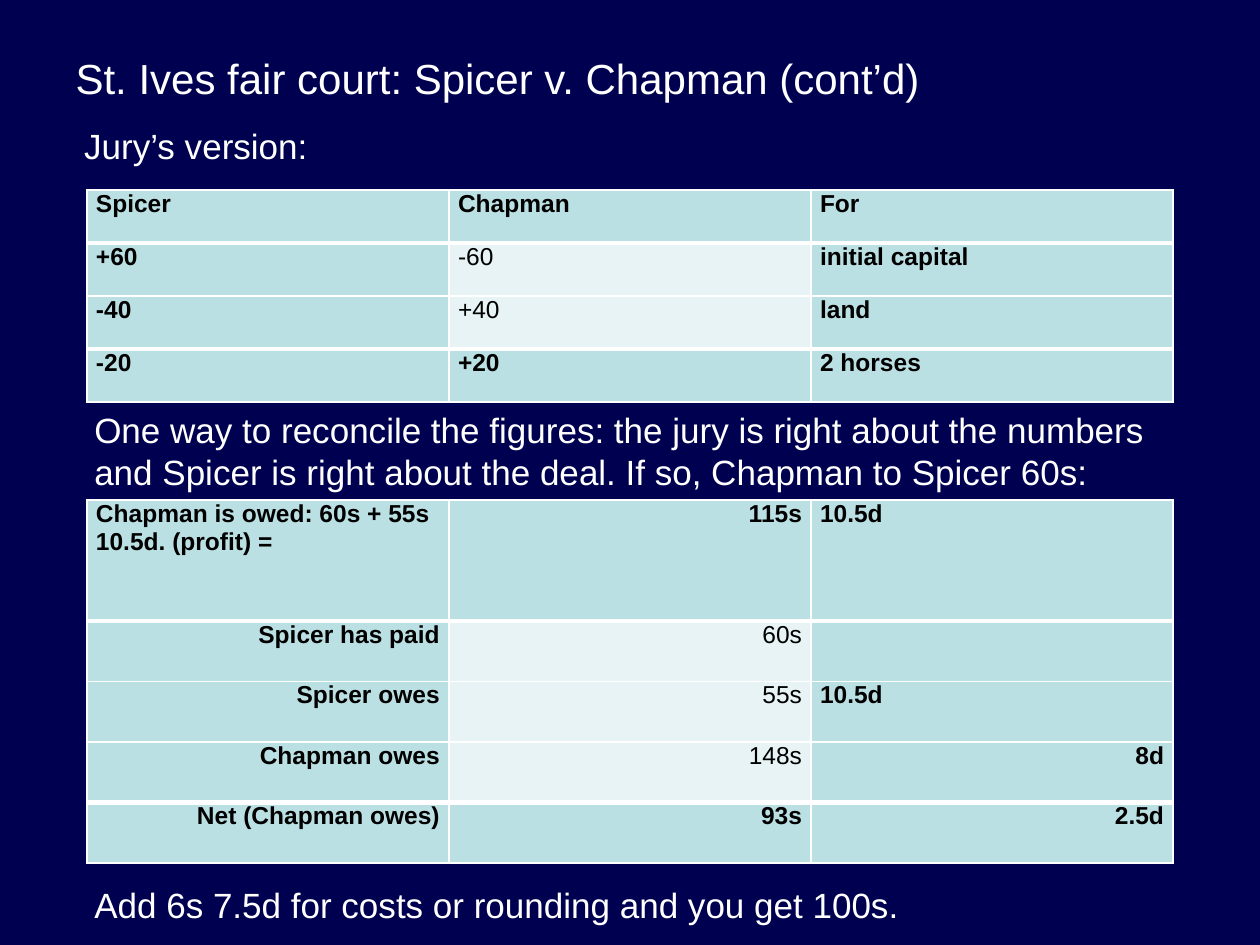
"""Build the Spicer v. Chapman slide with two account tables."""
from dataclasses import dataclass

import pptx
import pptx.dml.color
import pptx.enum.text
import pptx.oxml
import pptx.oxml.ns
import pptx.util

ALIGN = {"l": pptx.enum.text.PP_ALIGN.LEFT, "r": pptx.enum.text.PP_ALIGN.RIGHT}
ANCHOR = pptx.enum.text.MSO_ANCHOR
AUTO_SIZE = pptx.enum.text.MSO_AUTO_SIZE


@dataclass(frozen=True)
class Theme:
    """Colours, font and type sizes."""
    back: str = "000050"
    light: str = "FFFFFF"
    dark: str = "000000"
    strong: str = "BBE0E3"
    pale: str = "E7F3F4"
    font: str = "Arial"
    title: int = 24
    body: int = 20
    cell: int = 14


@dataclass(frozen=True)
class Box:
    """A place on a grid of 100 columns by 75 rows."""
    col: float
    row: float
    cols: float
    rows: float

    def emu(self) -> list[int]:
        """Return left, top, width and height."""
        return [grid(n) for n in (self.col, self.row, self.cols, self.rows)]


@dataclass(frozen=True)
class Note:
    """A line of body text."""
    box: Box
    text: str


@dataclass(frozen=True)
class Account:
    """A table whose rows hold the alignments and the cell texts."""
    box: Box
    heights: list[float]
    rows: list[tuple[str, list[str]]]


T = Theme()
TITLE = Note(Box(5, 3, 90, 6.4), "St. Ives fair court: Spicer v. Chapman (cont’d)")
NOTES = [
    Note(Box(5.7, 9.4, 92.3, 4.4), "Jury’s version:"),
    Note(Box(6.5, 31.9, 90, 7.7),
         "One way to reconcile the figures: the jury is right about the numbers "
         "and Spicer is right about the deal. If so, Chapman to Spicer 60s:"),
    Note(Box(6.5, 69.6, 90, 4.4), "Add 6s 7.5d for costs or rounding and you get 100s."),
]
ACCOUNTS = [
    Account(Box(6.9, 15.1, 86.2, 16.8), [4.2] * 4, [
        ("lll", ["Spicer", "Chapman", "For"]),
        ("lll", ["+60", "-60", "initial capital"]),
        ("lll", ["-40", "+40", "land"]),
        ("lll", ["-20", "+20", "2 horses"]),
    ]),
    Account(Box(6.9, 39.7, 86.2, 28.8), [9.6] + [4.8] * 4, [
        ("lrl", ["Chapman is owed: 60s + 55s 10.5d. (profit) =", "115s", "10.5d"]),
        ("rrl", ["Spicer has paid", "60s", ""]),
        ("rrl", ["Spicer owes", "55s", "10.5d"]),
        ("rrr", ["Chapman owes", "148s", "8d"]),
        ("rrr", ["Net (Chapman owes)", "93s", "2.5d"]),
    ]),
]


def grid(n: float) -> int:
    """Turn grid units into a length."""
    return pptx.util.Inches(n / 10)


def rgb(value: str) -> pptx.dml.color.RGBColor:
    """Return a colour."""
    return pptx.dml.color.RGBColor.from_string(value)


def apply(obj: object, values: dict) -> None:
    """Set attributes from a dict."""
    for name, value in values.items():
        setattr(obj, name, value)


def write(tf, text: str, size: int, color: str, bold: bool = False):
    """Write one formatted paragraph and return it."""
    p = tf.paragraphs[0]
    f = p.font
    if text:
        r = p.add_run()
        r.text = text
        f = r.font
    apply(f, {"name": T.font, "size": pptx.util.Pt(size), "bold": bold})
    f.color.rgb = rgb(color)
    return p


def place(sp, box: Box) -> None:
    """Move a shape to its box."""
    apply(sp, dict(zip(("left", "top", "width", "height"), box.emu())))


def add_title(s, note: Note) -> None:
    """Fill and format the title placeholder."""
    sp = s.shapes.title
    place(sp, note.box)
    apply(sp.text_frame, {"word_wrap": True, "auto_size": AUTO_SIZE.NONE,
                          "vertical_anchor": ANCHOR.MIDDLE})
    p = write(sp.text_frame, note.text, T.title, T.light)
    p.alignment = ALIGN["l"]


def add_note(s, note: Note) -> None:
    """Add a line of body text."""
    tf = s.shapes.add_textbox(*note.box.emu()).text_frame
    apply(tf, {"word_wrap": True, "auto_size": AUTO_SIZE.SHAPE_TO_FIT_TEXT})
    write(tf, note.text, T.body, T.light)


def add_border(cell, side: str, width: int) -> None:
    """Add a border to one side of a cell."""
    ns = pptx.oxml.ns.nsdecls("a")
    cell._tc.get_or_add_tcPr().append(pptx.oxml.parse_xml(
        f'<a:ln{side} {ns} w="{pptx.util.Pt(width)}"><a:solidFill>'
        f'<a:srgbClr val="{T.light}"/></a:solidFill></a:ln{side}>'))


def add_account(s, account: Account) -> None:
    """Add a table with heavy rules under its first and over its last row."""
    last = len(account.rows) - 1
    tbl = s.shapes.add_table(last + 1, 3, *account.box.emu()).table
    apply(tbl, {"horz_banding": False})
    for col in tbl.columns:
        col.width = grid(account.box.cols / 3)
    for i, (aligns, texts) in enumerate(account.rows):
        tbl.rows[i].height = grid(account.heights[i])
        widths = {"L": 1, "R": 1, "T": 3 if i in (1, last) else 1,
                  "B": 3 if i in (0, last - 1) else 1}
        for j, (align, text) in enumerate(zip(aligns, texts)):
            cell = tbl.cell(i, j)
            plain = j == 1 and 0 < i < last
            inset = grid(0.72)
            apply(cell, {"margin_left": inset, "margin_right": inset, "margin_top": 0,
                         "margin_bottom": 0, "vertical_anchor": ANCHOR.TOP})
            for side, width in widths.items():
                add_border(cell, side, width)
            cell.fill.solid()
            cell.fill.fore_color.rgb = rgb(T.pale if plain else T.strong)
            p = write(cell.text_frame, text, T.cell, T.dark, not plain)
            apply(p, {"alignment": ALIGN[align],
                      "space_after": pptx.util.Pt(5 if i == last else 0)})


def main() -> None:
    """Build and save the slide."""
    prs = pptx.Presentation()
    apply(prs, {"slide_width": grid(100), "slide_height": grid(75)})
    s = prs.slides.add_slide(prs.slide_layouts[5])
    s.background.fill.solid()
    s.background.fill.fore_color.rgb = rgb(T.back)
    add_title(s, TITLE)
    for note in NOTES:
        add_note(s, note)
    for account in ACCOUNTS:
        add_account(s, account)
    prs.save("out.pptx")


if __name__ == "__main__":
    main()
